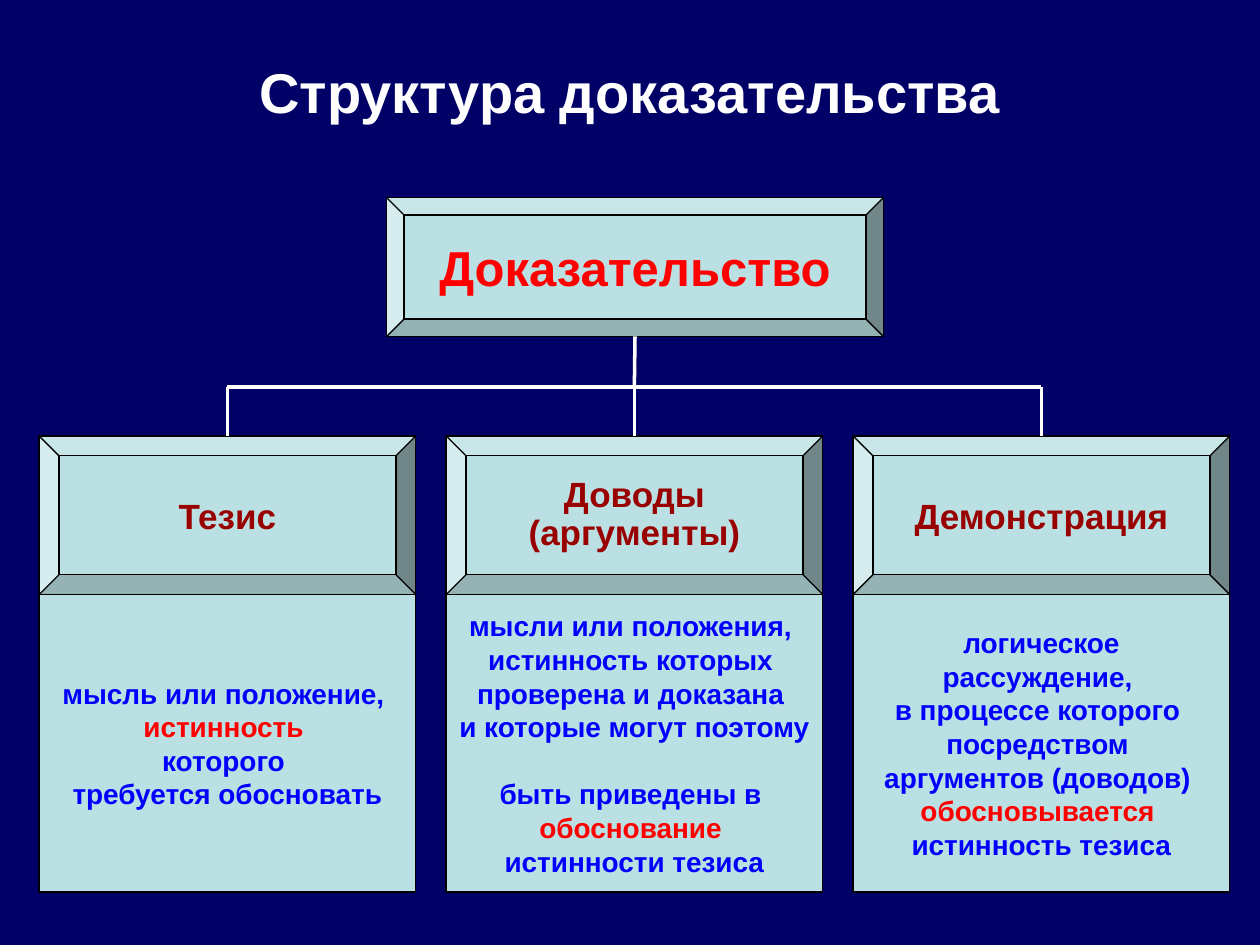
import pptx
import pptx.util
import pptx.dml.color
import pptx.enum.shapes
import pptx.enum.text
import pptx.oxml.ns
from lxml import etree

Inches = pptx.util.Inches
Pt = pptx.util.Pt
Shape = pptx.enum.shapes.MSO_SHAPE
color = pptx.dml.color.RGBColor.from_string


def write(frame, spans, size, wrap=True):
    """Fill a frame with one centred bold paragraph of (text, colour) spans."""
    frame.word_wrap = wrap
    frame.vertical_anchor = pptx.enum.text.MSO_ANCHOR.MIDDLE
    para = frame.paragraphs[0]
    para.alignment = pptx.enum.text.PP_ALIGN.CENTER
    para.font.size = Pt(size)
    for text, hex_color in spans:
        for number, line in enumerate(text.split("\n")):
            if number:
                para.add_line_break()
            if line:
                span = para.add_run()
                span.text = line
                span.font.name = "Arial"
                span.font.size = Pt(size)
                span.font.bold = True
                span.font.color.rgb = color(hex_color)
    return para


def add_box(kind, left, top, width, height):
    box = page.shapes.add_shape(kind, Inches(left), Inches(top), Inches(width), Inches(height))
    box.shadow.inherit = False
    box.fill.solid()
    box.fill.fore_color.rgb = color("BBE0E3")
    box.line.color.rgb = color("000000")
    box.line.width = Pt(0.75)
    return box


deck = pptx.Presentation()
deck.slide_width, deck.slide_height = Inches(10), Inches(7.5)
page = deck.slides.add_slide(deck.slide_layouts[5])
page.background.fill.solid()
page.background.fill.fore_color.rgb = color("000066")

# Title
title = page.shapes.title
title.left, title.top, title.width, title.height = Inches(0.5), Inches(0.1), Inches(9), Inches(1.25)
write(title.text_frame, [("Структура доказательства", "FFFFFF")], 32)

# Root of the tree
root = add_box(Shape.BEVEL, 3.07, 1.57, 3.94, 1.1)
write(root.text_frame, [("Доказательство", "FF0000")], 28, wrap=False)

# Three branches: heading above its definition
BLUE, RED = "0000FF", "FF0000"
branches = [
    ("Тезис", [
        ("мысль или положение, \n", BLUE),
        ("истинность \n", RED),
        ("которого \nтребуется обосновать", BLUE)]),
    ("Доводы\n(аргументы)", [
        ("мысли или положения, \nистинность которых \nпроверена и доказана \n"
         "и которые могут поэтому \nбыть приведены в \n", BLUE),
        ("обоснование \n", RED),
        ("истинности тезиса", BLUE)]),
    ("Демонстрация", [
        ("логическое рассуждение, \nв процессе которого \nпосредством \n"
         "аргументов (доводов) \n", BLUE),
        ("обосновывается \n", RED),
        ("истинность тезиса", BLUE)]),
]
first_left, step, width = 0.31, 3.23, 2.99
head_top, body_top = 3.46, 4.72
centers = []
for index, (heading, definition) in enumerate(branches):
    left = first_left + index * step
    centers.append(left + width / 2)
    head = add_box(Shape.BEVEL, left, head_top, width, body_top - head_top)
    para = write(head.text_frame, [(heading, "990000")], 20, wrap=False)
    if "\n" in heading:
        para.line_spacing = 0.9
    body = add_box(Shape.RECTANGLE, left, body_top, width, 2.36)
    write(body.text_frame, definition, 16)

# Tree lines: trunk, crossbar halves, drops to the branches
root_bottom, bar = 2.67, 3.07
middle = centers[1]
lines = [(middle, root_bottom, middle, bar)]
lines += [(middle, bar, center, bar) for center in (centers[0], centers[2])]
lines += [(center, bar, center, head_top) for center in centers]
for index, ends in enumerate(lines):
    line = page.shapes.add_connector(
        pptx.enum.shapes.MSO_CONNECTOR.STRAIGHT, *[Inches(value) for value in ends])
    line.line.color.rgb = color("FFFFFF")
    line.line.width = Pt(2)
    etree.SubElement(line._element.spPr, pptx.oxml.ns.qn("a:effectLst"))
    if index == 0:
        line.begin_connect(root, 2)

deck.save("out.pptx")
